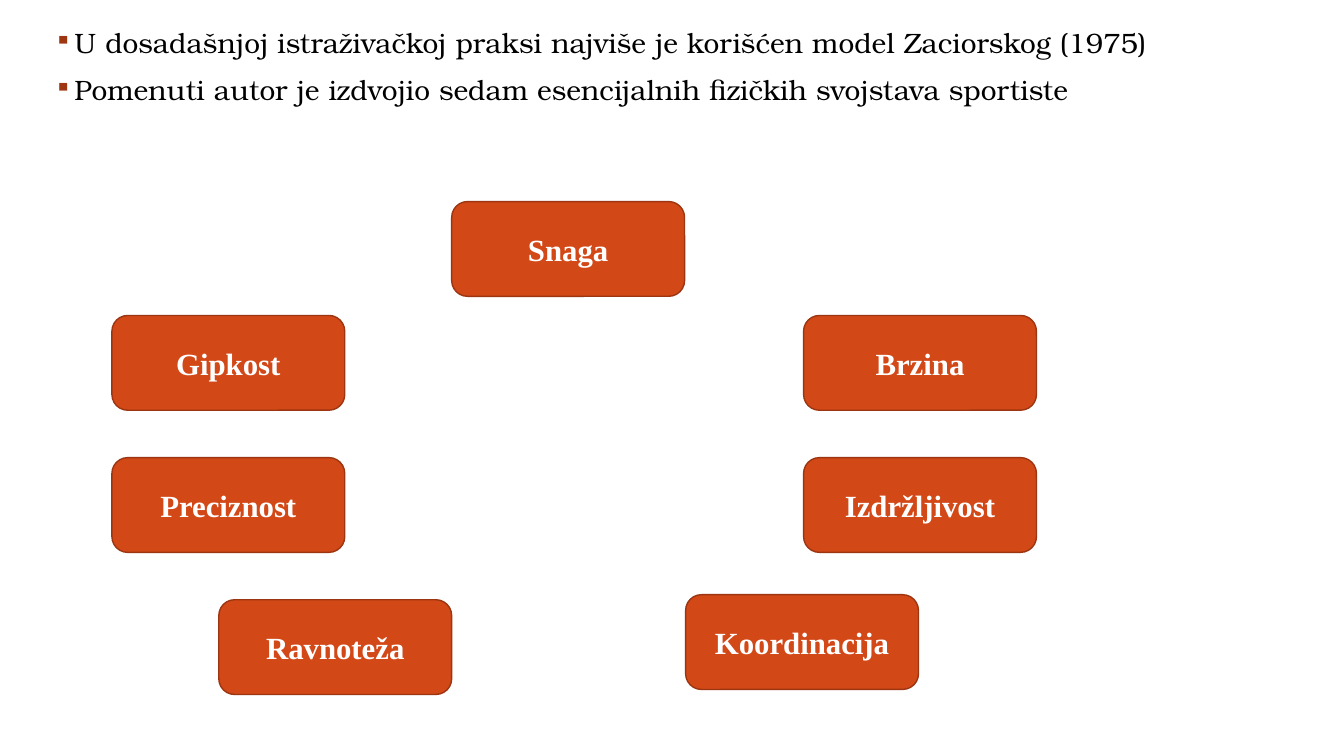
from dataclasses import dataclass

from lxml import etree
from pptx import Presentation
from pptx import util as u
from pptx.dml.color import RGBColor
from pptx.enum import shapes, text
from pptx.oxml import ns

COLORS = {
    "text": "000000",
    "bullet": "9E3611",
    "box": "D34817",
    "outline": "9C3511",
    "label": "FFFFFF",
}
BODY_FORMAT = {"name": "TeX Gyre Bonum", "size": u.Pt(20), "bold": False}
LABEL_FORMAT = {"name": "Times New Roman", "size": u.Pt(22), "bold": True}
BOX_WIDTH, BOX_HEIGHT = 2.31, 0.94
LEFT_COLUMN, RIGHT_COLUMN = 1.11, 7.97
UPPER_ROW, LOWER_ROW = 3.13, 4.54

STATEMENTS = [
    "U dosadašnjoj istraživačkoj praksi najviše je korišćen model Zaciorskog (1975)",
    "Pomenuti autor je izdvojio sedam esencijalnih fizičkih svojstava sportiste",
]


@dataclass(frozen=True)
class Trait:
    label: str
    left: float
    top: float


TRAITS = [
    Trait("Gipkost", LEFT_COLUMN, UPPER_ROW),
    Trait("Preciznost", LEFT_COLUMN, LOWER_ROW),
    Trait("Ravnoteža", 2.17, 5.95),
    Trait("Koordinacija", 6.8, 5.9),
    Trait("Izdržljivost", RIGHT_COLUMN, LOWER_ROW),
    Trait("Brzina", RIGHT_COLUMN, UPPER_ROW),
    Trait("Snaga", 4.48, 2),
]


def color(name: str) -> RGBColor:
    return RGBColor.from_string(COLORS[name])


def write_run(paragraph, content: str, formats: dict, color_name: str) -> None:
    run = paragraph.add_run()
    run.text = content
    for attribute, value in formats.items():
        setattr(run.font, attribute, value)
    run.font.color.rgb = color(color_name)


def add_bullet(paragraph) -> None:
    properties = paragraph._p.get_or_add_pPr()
    properties.set("marL", str(u.Inches(0.2)))
    properties.set("indent", str(u.Inches(-0.2)))
    bullet_color = etree.SubElement(properties, ns.qn("a:buClr"))
    etree.SubElement(bullet_color, ns.qn("a:srgbClr"), val=COLORS["bullet"])
    etree.SubElement(properties, ns.qn("a:buSzPct"), val="85000")
    etree.SubElement(properties, ns.qn("a:buChar"), char="▪")


def add_statements(slide, statements: list[str]) -> None:
    box = slide.shapes.add_textbox(
        u.Inches(0.44), u.Inches(0.24), u.Inches(12.09), u.Inches(1.22)
    )
    frame = box.text_frame
    frame.word_wrap = True
    for index, statement in enumerate(statements):
        paragraph = frame.add_paragraph() if index else frame.paragraphs[0]
        add_bullet(paragraph)
        paragraph.line_spacing = 0.9
        paragraph.space_before = u.Pt(12 if index else 0)
        write_run(paragraph, statement, BODY_FORMAT, "text")


def add_trait(slide, trait: Trait) -> None:
    shape = slide.shapes.add_shape(
        shapes.MSO_SHAPE.ROUNDED_RECTANGLE,
        u.Inches(trait.left),
        u.Inches(trait.top),
        u.Inches(BOX_WIDTH),
        u.Inches(BOX_HEIGHT),
    )
    shape.shadow.inherit = False
    shape.fill.solid()
    shape.fill.fore_color.rgb = color("box")
    shape.line.color.rgb = color("outline")
    shape.line.width = u.Pt(1)
    frame = shape.text_frame
    frame.word_wrap = True
    frame.vertical_anchor = text.MSO_ANCHOR.MIDDLE
    paragraph = frame.paragraphs[0]
    paragraph.alignment = text.PP_ALIGN.CENTER
    write_run(paragraph, trait.label, LABEL_FORMAT, "label")


def main() -> None:
    presentation = Presentation()
    presentation.slide_width = u.Inches(13.33)
    presentation.slide_height = u.Inches(7.5)
    slide = presentation.slides.add_slide(presentation.slide_layouts[6])
    add_statements(slide, STATEMENTS)
    for trait in TRAITS:
        add_trait(slide, trait)
    presentation.save("out.pptx")


if __name__ == "__main__":
    main()
